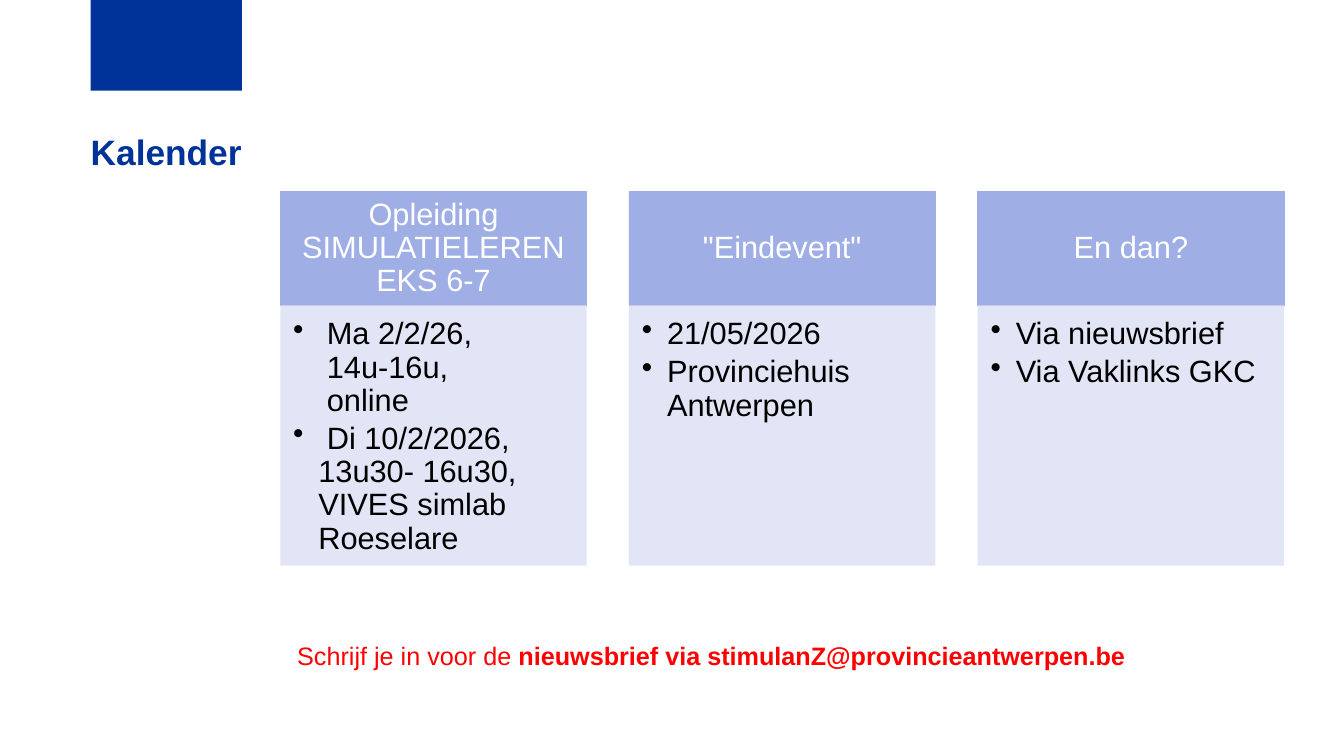
import pptx
import pptx.util
import pptx.dml.color
import pptx.enum.shapes
import pptx.enum.text
import pptx.oxml
import pptx.oxml.ns
from lxml import etree

Pt = pptx.util.Pt
ANCHOR = pptx.enum.text.MSO_ANCHOR
ALIGN = pptx.enum.text.PP_ALIGN

# Content: each item is a list of lines
TITLE = "Kalender"
COLUMNS = [
    (["Opleiding", "SIMULATIELEREN EKS 6-7"],
     [[" Ma 2/2/26,", " 14u-16u,", " online"],
      [" Di 10/2/2026, 13u30- 16u30, VIVES simlab Roeselare"]]),
    (['"Eindevent"'], [["21/05/2026"], ["Provinciehuis Antwerpen"]]),
    (["En dan?"], [["Via nieuwsbrief"], ["Via Vaklinks GKC"]]),
]
FOOTER = [("Schrijf je in voor de ", False),
          ("nieuwsbrief via stimulanZ@provincieantwerpen.be", True)]

# Colours and column layout, in points
NAVY, HEAD, BODY = "003399", "9FAEE5", "DFE3F5"
WHITE, BLACK, RED = "FFFFFF", "000000", "FF0000"
LEFT, TOP, PITCH, WIDTH = 200.2, 136.8, 249.1, 218.9
HEAD_H, BODY_H = 81.4, 185.8
INDENT = 18


def rgb(hex_color):
    return pptx.dml.color.RGBColor.from_string(hex_color)


def add_rect(s, x, y, w, h, fill, line=None):
    sp = s.shapes.add_shape(pptx.enum.shapes.MSO_SHAPE.RECTANGLE,
                            Pt(x), Pt(y), Pt(w), Pt(h))
    sp.shadow.inherit = False
    sp.fill.solid()
    sp.fill.fore_color.rgb = rgb(fill)
    if line:
        sp.line.color.rgb = rgb(line)
        sp.line.width = Pt(0.5)
    else:
        sp.line.fill.background()
    return sp


def set_frame(sp, insets, anchor=ANCHOR.TOP):
    tf = sp.text_frame
    tf.word_wrap = True
    tf.vertical_anchor = anchor
    tf.margin_left, tf.margin_top, tf.margin_right, tf.margin_bottom = map(Pt, insets)
    return tf


def add_run(p, text, size, color, bold=False):
    r = p.add_run()
    r.text = text
    r.font.name = "Arial"
    r.font.size = Pt(size)
    r.font.bold = bold
    r.font.color.rgb = rgb(color)


def add_lines(p, lines, color):
    p.line_spacing = 0.9
    for i, line in enumerate(lines):
        if i:
            p.add_line_break()
        add_run(p, line, 22, color)


def add_bullet(p):
    pPr = p._p.get_or_add_pPr()
    pPr.set("marL", str(Pt(INDENT)))
    pPr.set("indent", str(-Pt(INDENT)))
    etree.SubElement(pPr, pptx.oxml.ns.qn("a:buChar")).set("char", "•")


def set_alpha(sp, percent):
    clr = sp.fill._xPr.find(".//" + pptx.oxml.ns.qn("a:srgbClr"))
    etree.SubElement(clr, pptx.oxml.ns.qn("a:alpha")).set("val", str(percent * 1000))


prs = pptx.Presentation()
prs.slide_width, prs.slide_height = Pt(960), Pt(540)
s = prs.slides.add_slide(prs.slide_layouts[6])

# Corner block and title
add_rect(s, 64.8, 0, 108, 64.8, NAVY)
tf = set_frame(s.shapes.add_textbox(Pt(64.8), Pt(96.5), Pt(140.4), Pt(28.8)), (0, 0, 0, 0))
tf.paragraphs[0].line_spacing = 0.9
add_run(tf.paragraphs[0], TITLE, 25.2, NAVY, True)

# Calendar columns
for col, (heading, items) in enumerate(COLUMNS):
    x = LEFT + col * PITCH
    sp = add_rect(s, x, TOP, WIDTH, HEAD_H, HEAD, HEAD)
    p = set_frame(sp, (12.2, 7, 12.2, 7), ANCHOR.MIDDLE).paragraphs[0]
    p.alignment = ALIGN.CENTER
    add_lines(p, heading, WHITE)

    sp = add_rect(s, x, TOP + HEAD_H, WIDTH, BODY_H, BODY)
    set_alpha(sp, 90)
    tf = set_frame(sp, (9.2, 9.2, 12.2, 13.8))
    for i, lines in enumerate(items):
        p = tf.add_paragraph() if i else tf.paragraphs[0]
        p.alignment = ALIGN.LEFT
        p.space_after = Pt(3.3)
        add_bullet(p)
        add_lines(p, lines, BLACK)

# Newsletter line
tf = set_frame(s.shapes.add_textbox(Pt(205.2), Pt(453.6), Pt(717.1), Pt(51.1)),
               (7.2, 3.6, 7.2, 3.6))
for text, bold in FOOTER:
    add_run(tf.paragraphs[0], text, 18, RED, bold)

prs.save("out.pptx")
